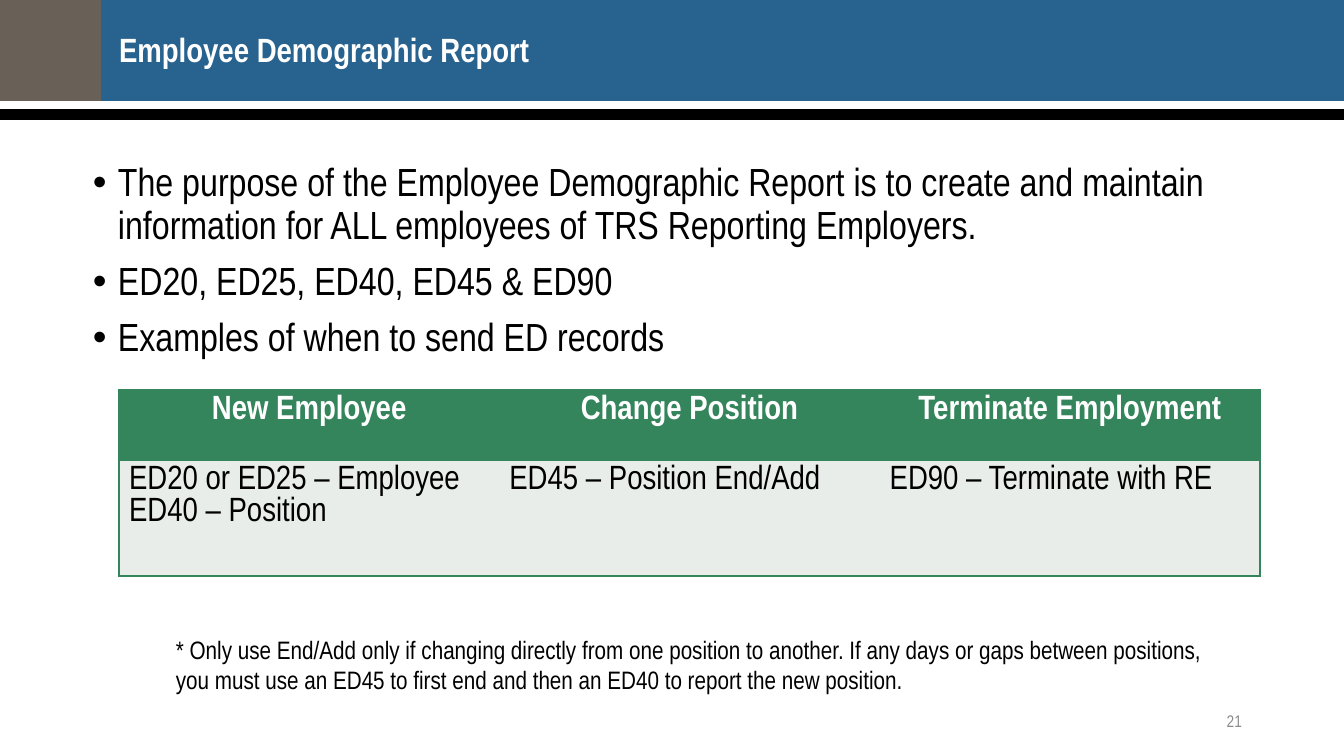
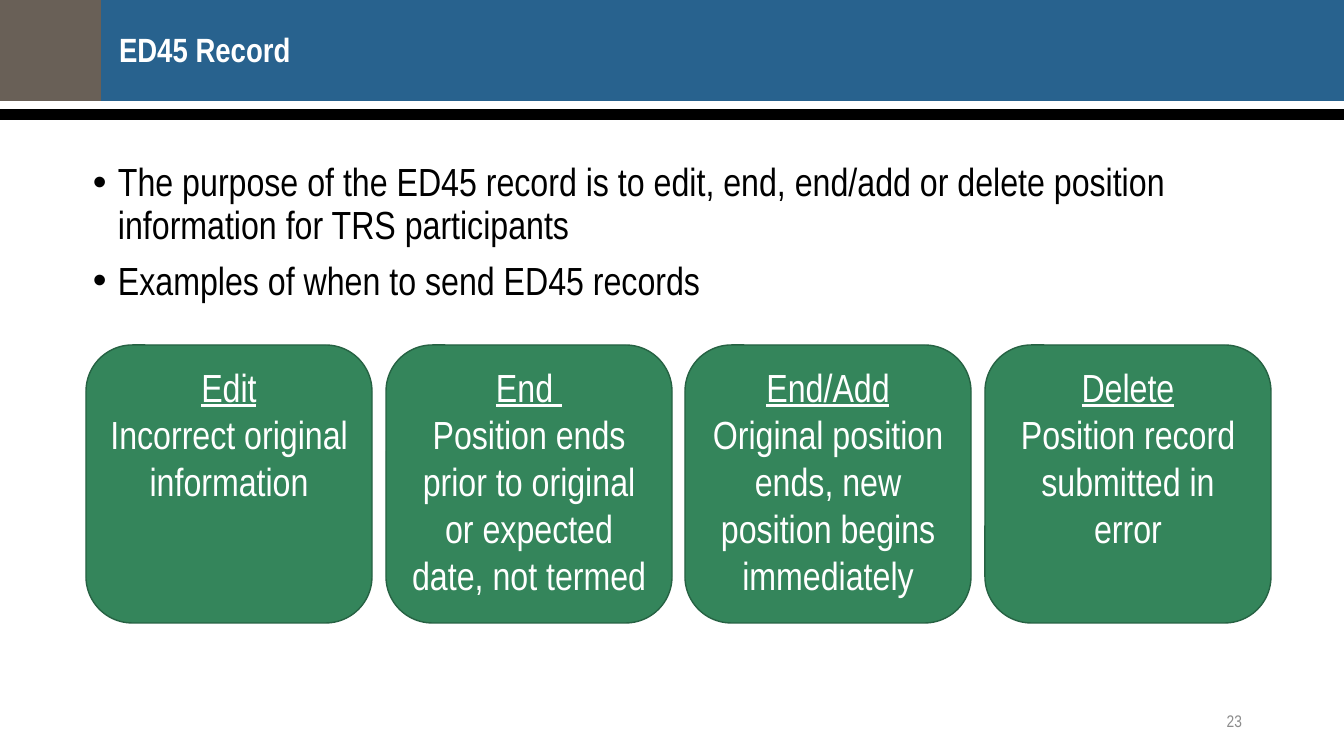
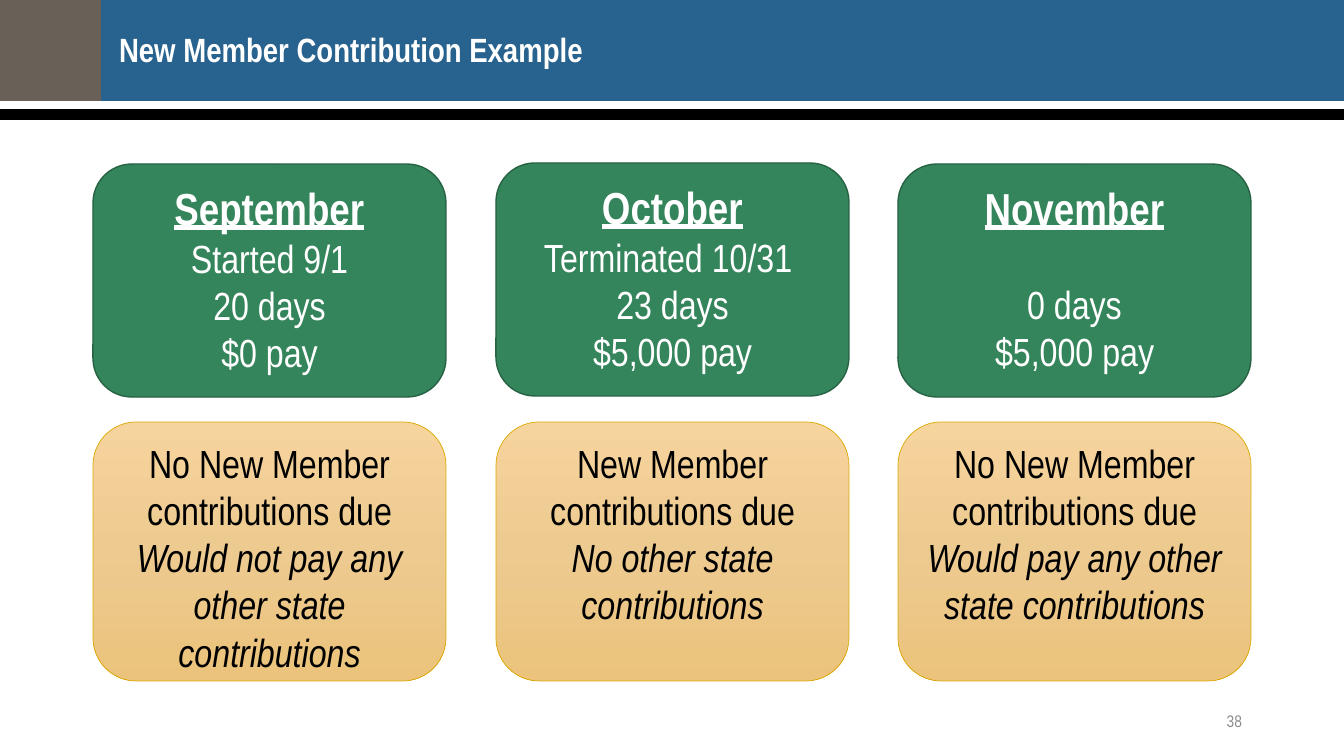
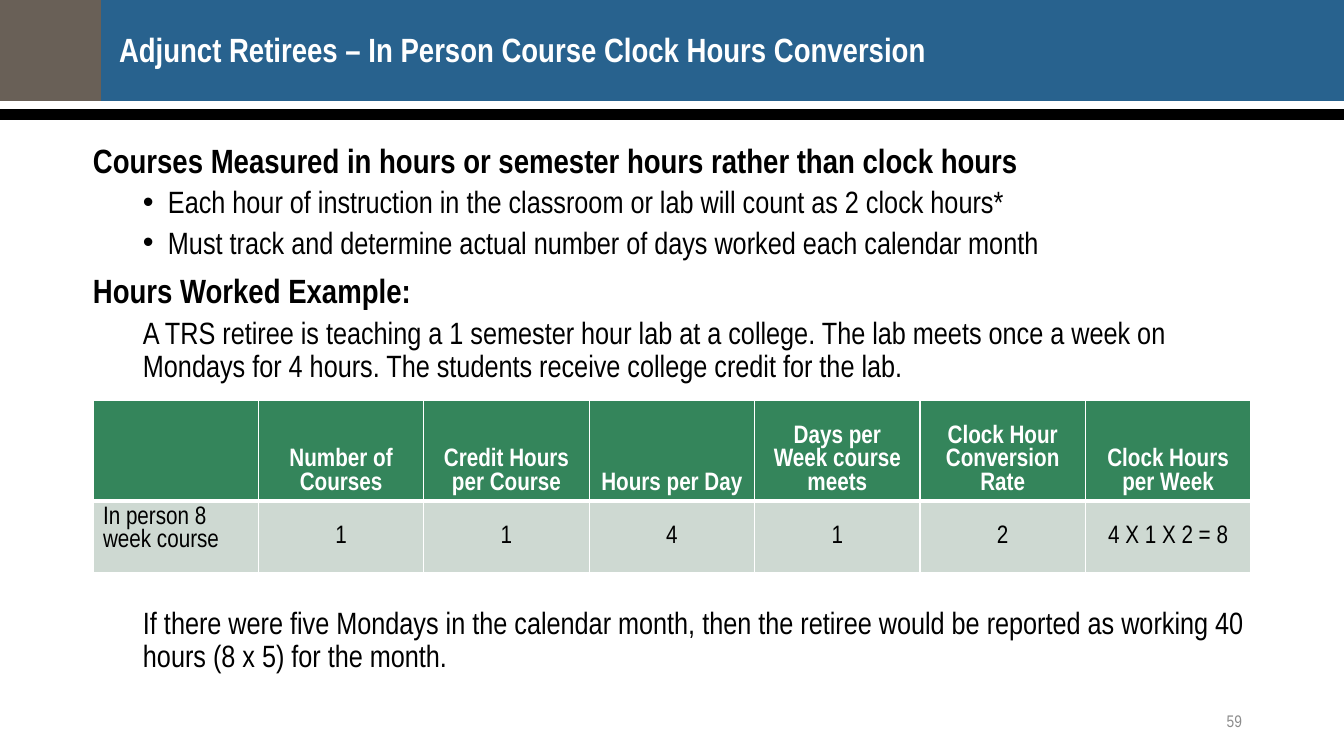
"""Build four employer-reporting training slides."""
from copy import deepcopy
from dataclasses import dataclass, replace
from typing import Any

from lxml.etree import SubElement
from pptx import Presentation
from pptx.dml.color import RGBColor
from pptx.enum.shapes import MSO_SHAPE as SHAPE
from pptx.enum.text import MSO_ANCHOR as ANCHOR, PP_ALIGN as ALIGN
from pptx.oxml.ns import qn
from pptx.oxml.xmlchemy import OxmlElement
from pptx.util import Emu, Pt

FONT = "Arial Narrow"
WHITE = RGBColor(0xFF, 0xFF, 0xFF)
BLACK = RGBColor(0x00, 0x00, 0x00)
BLUE = RGBColor(0x28, 0x62, 0x8E)
TAUPE = RGBColor(0x69, 0x60, 0x57)
GREEN = RGBColor(0x34, 0x85, 0x5B)
DARK_GREEN = RGBColor(0x26, 0x62, 0x43)
PALE_GREEN = RGBColor(0xE8, 0xED, 0xEA)
SAGE = RGBColor(0xCE, 0xD9, 0xD2)
GOLD = RGBColor(0xDB, 0xA9, 0x00)
SAND = (RGBColor(0xF6, 0xD4, 0x9D), RGBColor(0xED, 0xCA, 0x90), RGBColor(0xEB, 0xC3, 0x7C))
GREY = RGBColor(0x8C, 0x8C, 0x8C)

EMU_PER_INCH, PX_PER_INCH = 914400, 100.8
SLIDE_W, SLIDE_H = 1344, 756
LEFT, RIGHT = 93, 1251


@dataclass(frozen=True)
class Box:
    x: int
    y: int
    w: int
    h: int


@dataclass(frozen=True)
class Para:
    text: str
    size: int = 28
    color: RGBColor = BLACK
    bold: bool = False
    italic: bool = False
    underline: bool = False
    align: ALIGN = ALIGN.LEFT
    line: float = 1.0
    before: int = 0
    margin: int = 0
    bullet: bool = False


@dataclass(frozen=True)
class Card:
    fill: tuple[RGBColor, ...]
    line: RGBColor
    line_pt: float


@dataclass(frozen=True)
class Grid:
    box: Box
    row_heights: tuple[int, ...]
    rows: tuple[tuple[str, ...], ...]
    size: int
    body_fill: RGBColor
    border: RGBColor
    inner_borders: bool
    header_rule: int
    header_anchor: ANCHOR
    body_anchor: ANCHOR
    body_align: ALIGN


BANDS = (
    (Box(101, 0, SLIDE_W - 101, 101), BLUE),
    (Box(0, 0, 101, 101), TAUPE),
    (Box(0, 109, SLIDE_W, 11), BLACK),
)
GREEN_CARD = Card((GREEN,), DARK_GREEN, 1)
SAND_CARD = Card(SAND, GOLD, 0.5)


def px(n: int) -> Emu:
    return Emu(round(n * EMU_PER_INCH / PX_PER_INCH))


def place(box: Box) -> tuple[Emu, ...]:
    return px(box.x), px(box.y), px(box.w), px(box.h)


def apply(obj: Any, values: dict[str, Any]) -> None:
    for name, value in values.items():
        setattr(obj, name, value)


def spread(left: int, right: int, width: int, count: int) -> list[int]:
    pitch = (right - left - width) / (count - 1)
    return [round(left + i * pitch) for i in range(count)]


def write(tf: Any, paras: list[Para]) -> None:
    for i, para in enumerate(paras):
        p = tf.add_paragraph() if i else tf.paragraphs[0]
        pPr = p._p.get_or_add_pPr()
        if para.margin:
            pPr.set("marL", str(px(para.margin)))
        if para.bullet:
            pPr.set("indent", str(-px(25)))
            SubElement(pPr, qn("a:buFont")).set("typeface", "Arial")
            SubElement(pPr, qn("a:buChar")).set("char", "•")
        apply(p, {"alignment": para.align, "line_spacing": para.line,
                  "space_before": Pt(para.before if i else 0)})
        r = p.add_run()
        r.text = para.text
        apply(r.font, {"name": FONT, "size": Pt(para.size), "bold": para.bold,
                       "italic": para.italic, "underline": para.underline})
        r.font.color.rgb = para.color


def add_text(s: Any, box: Box, paras: list[Para], inset: bool = False,
             anchor: ANCHOR = ANCHOR.TOP) -> None:
    tf = s.shapes.add_textbox(*place(box)).text_frame
    apply(tf, {"word_wrap": True, "vertical_anchor": anchor})
    if not inset:
        apply(tf, dict.fromkeys(("margin_left", "margin_top", "margin_right", "margin_bottom"), 0))
    write(tf, paras)


def add_band(s: Any, box: Box, color: RGBColor) -> None:
    sp = s.shapes.add_shape(SHAPE.RECTANGLE, *place(box))
    sp.shadow.inherit = False
    sp.fill.solid()
    sp.fill.fore_color.rgb = color
    sp.line.fill.background()


def add_card(s: Any, box: Box, card: Card, paras: list[Para]) -> None:
    sp = s.shapes.add_shape(SHAPE.ROUNDED_RECTANGLE, *place(box))
    sp.shadow.inherit = False
    if len(card.fill) == 1:
        sp.fill.solid()
        sp.fill.fore_color.rgb = card.fill[0]
    else:
        sp.fill.gradient()
        sp.fill.gradient_angle = 270
        first = next(sp._element.spPr.iter(qn("a:gs")))
        first.addnext(deepcopy(first))
        for i, (stop, color) in enumerate(zip(sp.fill.gradient_stops, card.fill)):
            stop.position = i / (len(card.fill) - 1)
            stop.color.rgb = color
    sp.line.color.rgb = card.line
    sp.line.width = Pt(card.line_pt)
    apply(sp.text_frame, {"word_wrap": True, "vertical_anchor": ANCHOR.TOP})
    write(sp.text_frame, [replace(para, align=ALIGN.CENTER) for para in paras])


def set_borders(cell: Any, grid: Grid, row: int, col: int) -> None:
    last = len(grid.rows[0]) - 1
    rule = grid.header_rule
    edges = (
        ("a:lnL", grid.inner_borders or col == 0, 1),
        ("a:lnR", grid.inner_borders or col == last, 1),
        ("a:lnT", True, rule if row == 1 else 1),
        ("a:lnB", True, rule if row == 0 else 1),
    )
    tcPr = cell._tc.get_or_add_tcPr()
    for i, (tag, shown, width) in enumerate(edges):
        ln = OxmlElement(tag)
        ln.set("w", str(Pt(width)))
        if shown:
            fill = SubElement(ln, qn("a:solidFill"))
            SubElement(fill, qn("a:srgbClr")).set("val", str(grid.border))
        else:
            SubElement(ln, qn("a:noFill"))
        tcPr.insert(i, ln)


def add_grid(s: Any, grid: Grid) -> None:
    count = len(grid.rows[0])
    table = s.shapes.add_table(len(grid.rows), count, *place(grid.box)).table
    table.horz_banding = False
    for column in table.columns:
        column.width = Emu(px(grid.box.w) // count)
    for row, texts in enumerate(grid.rows):
        table.rows[row].height = px(grid.row_heights[row])
        header = row == 0
        for col, text in enumerate(texts):
            cell = table.cell(row, col)
            cell.fill.solid()
            cell.fill.fore_color.rgb = GREEN if header else grid.body_fill
            label = not header and col == 0
            cell.vertical_anchor = (grid.header_anchor if header
                                    else ANCHOR.TOP if label else grid.body_anchor)
            align = ALIGN.CENTER if header else ALIGN.LEFT if label else grid.body_align
            if text:
                write(cell.text_frame, [
                    Para(line, grid.size, WHITE if header else BLACK, bold=header, align=align)
                    for line in text.split("\n")])
            set_borders(cell, grid, row, col)


def add_slide(prs: Any, title: str, number: int) -> Any:
    s = prs.slides.add_slide(prs.slide_layouts[6])
    for box, color in BANDS:
        add_band(s, box, color)
    add_text(s, Box(119, 33, 1132, 56), [Para(title, 24, WHITE, bold=True, line=0.9)])
    add_text(s, Box(950, 701, 302, 40), [Para(str(number), 12, GREY, align=ALIGN.RIGHT)],
             inset=True, anchor=ANCHOR.MIDDLE)
    return s


def bullets(*texts: str) -> list[Para]:
    return [Para(text, line=0.9, before=10, margin=25, bullet=True) for text in texts]


def demographic_slide(prs: Any) -> None:
    s = add_slide(prs, "Employee Demographic Report", 21)
    add_text(s, Box(LEFT, 163, 1159, 203), bullets(
        "The purpose of the Employee Demographic Report is to create and maintain "
        "information for ALL employees of TRS Reporting Employers.",
        "ED20, ED25, ED40, ED45 & ED90",
        "Examples of when to send ED records"))
    add_text(s, Box(166, 629, 1046, 72), [Para(
        "* Only use End/Add only if changing directly from one position to another. "
        "If any days or gaps between positions, you must use an ED45 to first end and "
        "then an ED40 to report the new position.", 18)], inset=True)
    add_grid(s, Grid(
        Box(119, 390, 1141, 186), (70, 116),
        (("New Employee", "Change Position", "Terminate Employment"),
         ("ED20 or ED25 – Employee\nED40 – Position", "ED45 – Position End/Add",
          "ED90 – Terminate with RE")),
        24, PALE_GREEN, GREEN, False, 1, ANCHOR.TOP, ANCHOR.TOP, ALIGN.LEFT))


def record_slide(prs: Any) -> None:
    s = add_slide(prs, "ED45 Record", 23)
    add_text(s, Box(LEFT, 163, 1159, 150), bullets(
        "The purpose of the ED45 record is to edit, end, end/add or delete position "
        "information for TRS participants",
        "Examples of when to send ED45 records"))
    actions = (
        ("Edit", "Incorrect original information"),
        ("End ", "Position ends prior to original or expected date, not termed"),
        ("End/Add", "Original position ends, new position begins immediately"),
        ("Delete", "Position record submitted in error"),
    )
    for x, (action, reason) in zip(spread(86, 1271, 286, len(actions)), actions):
        add_card(s, Box(x, 345, 286, 278), GREEN_CARD,
                 [Para(action, color=WHITE, underline=True), Para(reason, color=WHITE)])


def contribution_slide(prs: Any) -> None:
    s = add_slide(prs, "New Member Contribution Example", 38)
    months = (
        ("September", 164, ("Started 9/1", "20 days", "$0 pay"), 0,
         "No New Member contributions due", "Would not pay any other state contributions"),
        ("October", 163, ("Terminated 10/31 ", "23 days", "$5,000 pay"), 0,
         "New Member contributions due", "No other state contributions"),
        ("November", 164, ("0 days", "$5,000 pay"), 33,
         "No New Member contributions due", "Would pay any other state contributions"),
    )
    lefts = spread(LEFT, RIGHT, 353, len(months))
    for x, (month, top, facts, gap, due, note) in zip(lefts, months):
        details = [Para(fact, color=WHITE, before=0 if i else gap)
                   for i, fact in enumerate(facts)]
        add_card(s, Box(x, top, 353, 233), GREEN_CARD,
                 [Para(month, 32, WHITE, bold=True, underline=True), *details])
        add_card(s, Box(x, 422, 353, 259), SAND_CARD, [Para(due), Para(note, italic=True)])


def adjunct_slide(prs: Any) -> None:
    s = add_slide(prs, "Adjunct Retirees – In Person Course Clock Hours Conversion", 59)
    heading = Para("", 24, bold=True, line=0.9, before=10)
    plain = Para("", 22, line=0.9, before=5, margin=50)
    point = replace(plain, margin=75, bullet=True)
    add_text(s, Box(LEFT, 144, 1159, 245), [
        replace(heading, text="Courses Measured in hours or semester hours rather than clock hours"),
        replace(point, text="Each hour of instruction in the classroom or lab will count as "
                            "2 clock hours*"),
        replace(point, text="Must track and determine actual number of days worked each "
                            "calendar month"),
        replace(heading, text="Hours Worked Example:"),
        replace(plain, text="A TRS retiree is teaching a 1 semester hour lab at a college. "
                            "The lab meets once a week on Mondays for 4 hours. The students "
                            "receive college credit for the lab."),
    ])
    add_text(s, Box(LEFT, 608, 1159, 80), [replace(
        plain, text="If there were five Mondays in the calendar month, then the retiree would "
                    "be reported as working 40 hours (8 x 5) for the month.")])
    add_grid(s, Grid(
        Box(LEFT, 400, 1158, 165), (93, 72),
        (("", "Number of Courses", "Credit Hours per Course", "Hours per Day",
          "Days per Week course meets", "Clock Hour Conversion Rate", "Clock Hours per Week"),
         ("In person 8 week course", "1", "1", "4", "1", "2", "4 X 1 X 2 = 8")),
        18, SAGE, WHITE, True, 3, ANCHOR.BOTTOM, ANCHOR.MIDDLE, ALIGN.CENTER))


def main() -> None:
    prs = Presentation()
    apply(prs, {"slide_width": px(SLIDE_W), "slide_height": px(SLIDE_H)})
    for build in (demographic_slide, record_slide, contribution_slide, adjunct_slide):
        build(prs)
    prs.save("out.pptx")


if __name__ == "__main__":
    main()
